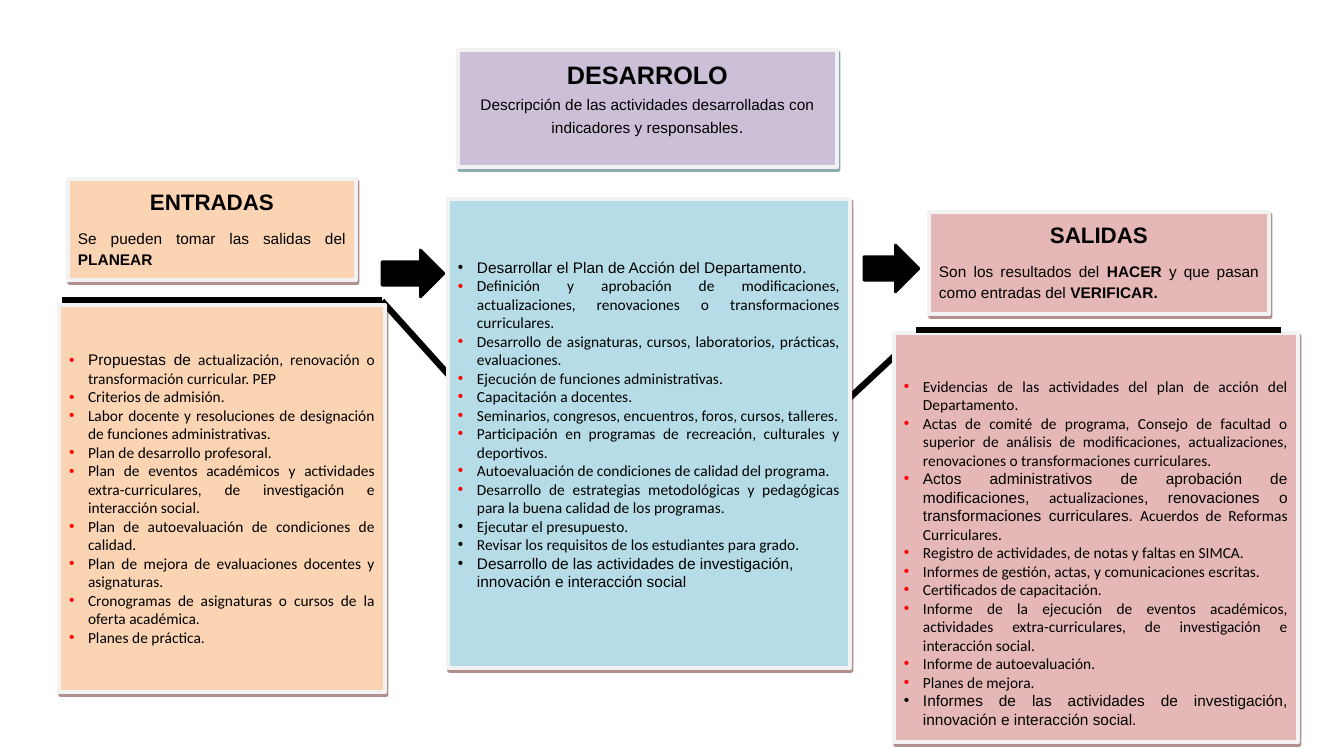
from lxml.etree import SubElement
from pptx import Presentation
from pptx.dml.color import RGBColor
from pptx.enum.shapes import MSO_CONNECTOR as Connector, MSO_SHAPE as Shape
from pptx.enum.text import MSO_ANCHOR as Anchor, MSO_AUTO_SIZE as AutoSize, PP_ALIGN as Align
from pptx.oxml.ns import qn
from pptx.util import Pt

PX = 12192000 / 1344
BLACK, RED = "000000", "FF0000"
ORANGE, PINK, PURPLE, BLUE = "FBD4B4", "E5B8B7", "CCC0D9", "B6DDE7"
BROWN, TEAL = "632423", "205867"
MARGIN_X, MARGIN_Y, HANGING = 10, 5, 19

PLAIN, BOLD, LARGE = ("Arial", 11, False), ("Arial", 11, True), ("Arial", 12, False)
LIST = ("Calibri", 11, False)

HEADERS = [
    dict(placeholder=1, at=(68, 179, 288, 101), fill=ORANGE, shadow=BROWN, title="ENTRADAS", size=16,
         text="Se pueden tomar las salidas del |PLANEAR", other=BOLD, align=Align.JUSTIFY, before=8),
    dict(placeholder=3, at=(929, 212, 340, 102), fill=PINK, shadow=BROWN, title="SALIDAS", size=16,
         text="Son los resultados del |HACER |y que pasan como entradas del |VERIFICAR.",
         other=BOLD, align=Align.JUSTIFY, before=8),
    dict(placeholder=0, at=(458, 50, 379, 117), fill=PURPLE, shadow=TEAL, title="DESARROLO", size=18,
         text="Descripción de las actividades desarrolladas con indicadores y responsables|.",
         other=LARGE, align=Align.CENTER, before=2),
]

PANELS = [
    dict(placeholder=2, at=(59, 305, 326, 387), fill=ORANGE, extra=(0, 0), black=(), left=(), items=[
        "|Propuestas de| actualización, renovación o transformación curricular. PEP",
        "Criterios de admisión.",
        "Labor docente y resoluciones de designación de funciones administrativas.",
        "Plan de desarrollo profesoral.",
        "Plan de eventos académicos y actividades extra-curriculares, de investigación e interacción social.",
        "Plan de autoevaluación de condiciones de calidad.",
        "Plan de mejora de evaluaciones docentes y asignaturas.",
        "Cronogramas de asignaturas o cursos de la oferta académica.",
        "Planes de práctica.",
    ]),
    dict(placeholder=None, at=(448, 199, 402, 469), fill=BLUE, extra=(0, 18),
         black=(0, 9, 10, 11), left=(10, 11), items=[
        "|Desarrollar el Plan de Acción del Departamento|.",
        "Definición y aprobación de modificaciones, actualizaciones, renovaciones o transformaciones "
        "curriculares.",
        "Desarrollo de asignaturas, cursos, laboratorios, prácticas, evaluaciones.",
        "Ejecución de funciones administrativas.",
        "Capacitación a docentes.",
        "Seminarios, congresos, encuentros, foros, cursos, talleres.",
        "Participación en programas de recreación, culturales y deportivos.",
        "Autoevaluación de condiciones de calidad del programa.",
        "Desarrollo de estrategias metodológicas y pedagógicas para la buena calidad de los programas.",
        "Ejecutar el presupuesto.",
        "Revisar los requisitos de los estudiantes para grado.",
        "|Desarrollo de las actividades de investigación, innovación e interacción social",
    ]),
    dict(placeholder=4, at=(894, 333, 404, 409), fill=PINK, extra=(30, 0), black=(9,), left=(), items=[
        "Evidencias de las actividades del plan de acción del Departamento.",
        "Actas de comité de programa, Consejo de facultad o superior de análisis de modificaciones, "
        "actualizaciones, renovaciones o transformaciones curriculares.",
        "|Actos administrativos de aprobación de modificaciones, |actualizaciones|, renovaciones o "
        "transformaciones curriculares.| Acuerdos de Reformas Curriculares.",
        "Registro de actividades, de notas y faltas en SIMCA.",
        "Informes de gestión, actas, y comunicaciones escritas.",
        "Certificados de capacitación.",
        "Informe de la ejecución de eventos académicos, actividades extra-curriculares, de investigación "
        "e interacción social.",
        "Informe de autoevaluación.",
        "Planes de mejora.",
        "|Informes de las actividades de investigación, innovación e interacción social.",
    ]),
]

DIAGONALS = [(648, 586, 916, 336), (382, 301, 647, 595)]
BARS = [(62, 300, 382, 300), (916, 330, 1281, 330)]
ARROWS = [(382, 250, 62, 47), (864, 245, 55, 47)]


def px(value):
    return round(value * PX)


def paint(colour_format, colour):
    colour_format.rgb = RGBColor.from_string(colour)


def outline(line, colour, width):
    line.fill.solid()
    paint(line.color, colour)
    line.width = Pt(width)


def fill_shape(shape, colour, line_colour, line_width):
    shape.fill.solid()
    paint(shape.fill.fore_color, colour)
    outline(shape.line, line_colour, line_width)
    shape.shadow.inherit = False


def add_box(slide, placeholder, at, fill, shadow, anchor, extra=(0, 0)):
    position = [px(value) for value in at]
    if placeholder is None:
        box = slide.shapes.add_textbox(*position)
    else:
        box = slide.placeholders[placeholder]
        box.left, box.top, box.width, box.height = position
        slide.shapes.element.append(box.element)
    fill_shape(box, fill, "F2F2F2", 3)
    effects = box.element.spPr.find(qn("a:effectLst"))
    outer = SubElement(effects, qn("a:outerShdw"), dist="28400", dir="3780000", algn="ctr", rotWithShape="0")
    tint = SubElement(outer, qn("a:srgbClr"), val=shadow)
    SubElement(tint, qn("a:alpha"), val="49000")
    frame = box.text_frame
    frame.word_wrap = True
    frame.auto_size = AutoSize.NONE
    frame.vertical_anchor = anchor
    frame.margin_left = frame.margin_right = px(MARGIN_X)
    frame.margin_top, frame.margin_bottom = [px(MARGIN_Y + more) for more in extra]
    return frame


def write(paragraph, text, base, other, align, spacing, before=0):
    paragraph.alignment = align
    paragraph.line_spacing = spacing
    paragraph.space_before, paragraph.space_after = Pt(before), Pt(0)
    for index, part in enumerate(text.split("|")):
        if part:
            run = paragraph.add_run()
            run.text = part
            name, size, bold = other if index % 2 else base
            run.font.name, run.font.size, run.font.bold = name, Pt(size), bold
            paint(run.font.color, BLACK)


def add_bullet(paragraph, colour):
    properties = paragraph._p.get_or_add_pPr()
    properties.set("marL", str(px(HANGING)))
    properties.set("indent", str(-px(HANGING)))
    SubElement(SubElement(properties, qn("a:buClr")), qn("a:srgbClr"), val=colour)
    SubElement(properties, qn("a:buFont"), typeface="Arial")
    SubElement(properties, qn("a:buChar"), char="•")


def add_header(slide, header):
    frame = add_box(slide, header["placeholder"], header["at"], header["fill"], header["shadow"], Anchor.TOP)
    heading = ("Arial", header["size"], True)
    write(frame.paragraphs[0], header["title"], heading, heading, Align.CENTER, 1.15)
    write(frame.add_paragraph(), header["text"], PLAIN, header["other"], header["align"], 1.15,
          header["before"])


def add_panel(slide, panel):
    frame = add_box(slide, panel["placeholder"], panel["at"], panel["fill"], BROWN, Anchor.MIDDLE,
                    panel["extra"])
    for index, item in enumerate(panel["items"]):
        paragraph = frame.add_paragraph() if index else frame.paragraphs[0]
        add_bullet(paragraph, BLACK if index in panel["black"] else RED)
        align = Align.LEFT if index in panel["left"] else Align.JUSTIFY
        write(paragraph, item, LIST, PLAIN, align, 1.0)


def add_line(slide, ends):
    line = slide.shapes.add_connector(Connector.STRAIGHT, *[px(value) for value in ends])
    outline(line.line, BLACK, 4.5)
    SubElement(line.element.spPr, qn("a:effectLst"))


def main():
    presentation = Presentation()
    presentation.slide_width, presentation.slide_height = px(1344), px(756)
    layout = presentation.slide_layouts.get_by_name("Comparison")
    slide = presentation.slides.add_slide(layout)
    for header in HEADERS:
        add_header(slide, header)
    for ends in DIAGONALS:
        add_line(slide, ends)
    for panel in PANELS:
        add_panel(slide, panel)
    for ends in BARS:
        add_line(slide, ends)
    for at in ARROWS:
        arrow = slide.shapes.add_shape(Shape.RIGHT_ARROW, *[px(value) for value in at])
        fill_shape(arrow, BLACK, BLACK, 2)
    presentation.save("out.pptx")


if __name__ == "__main__":
    main()
